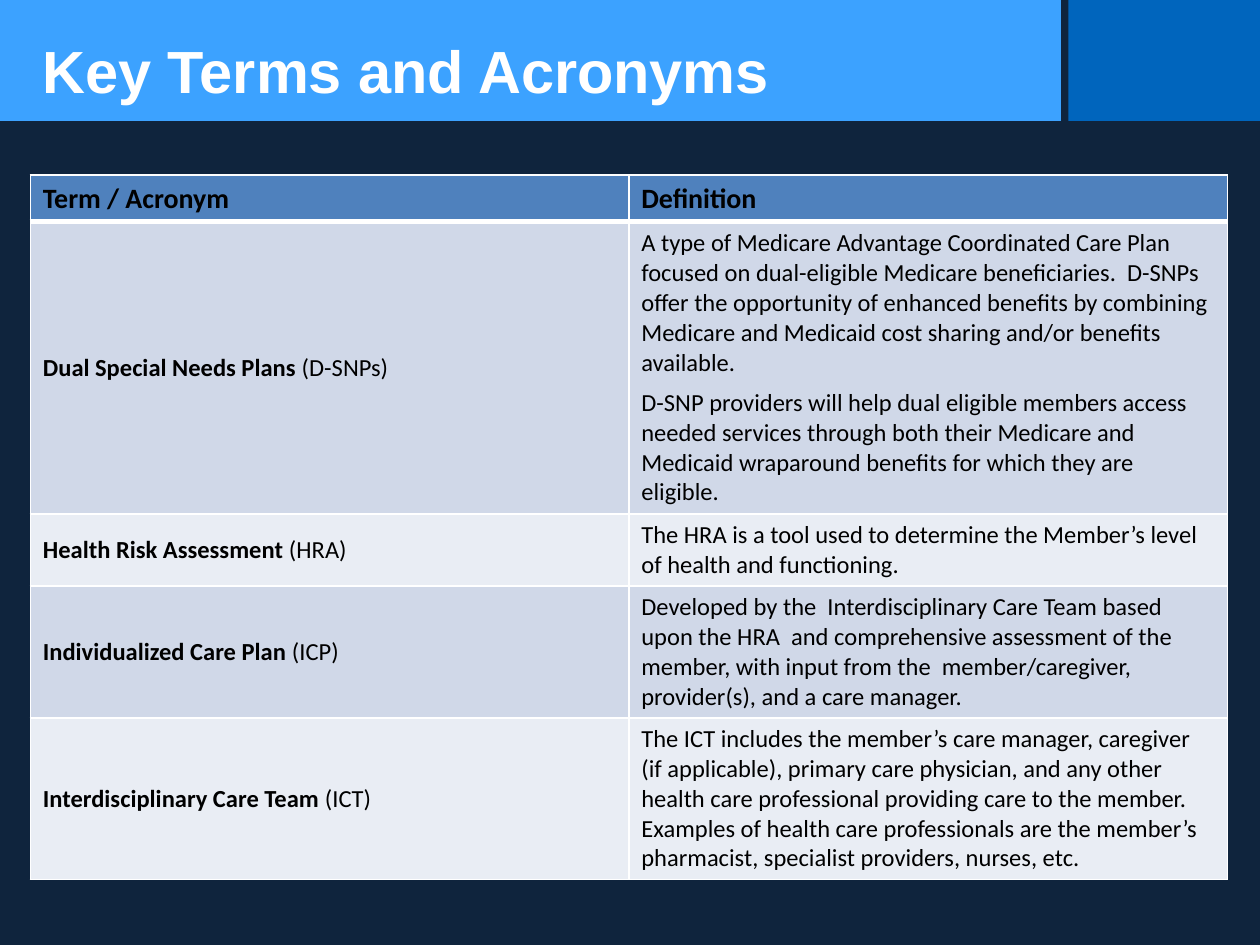
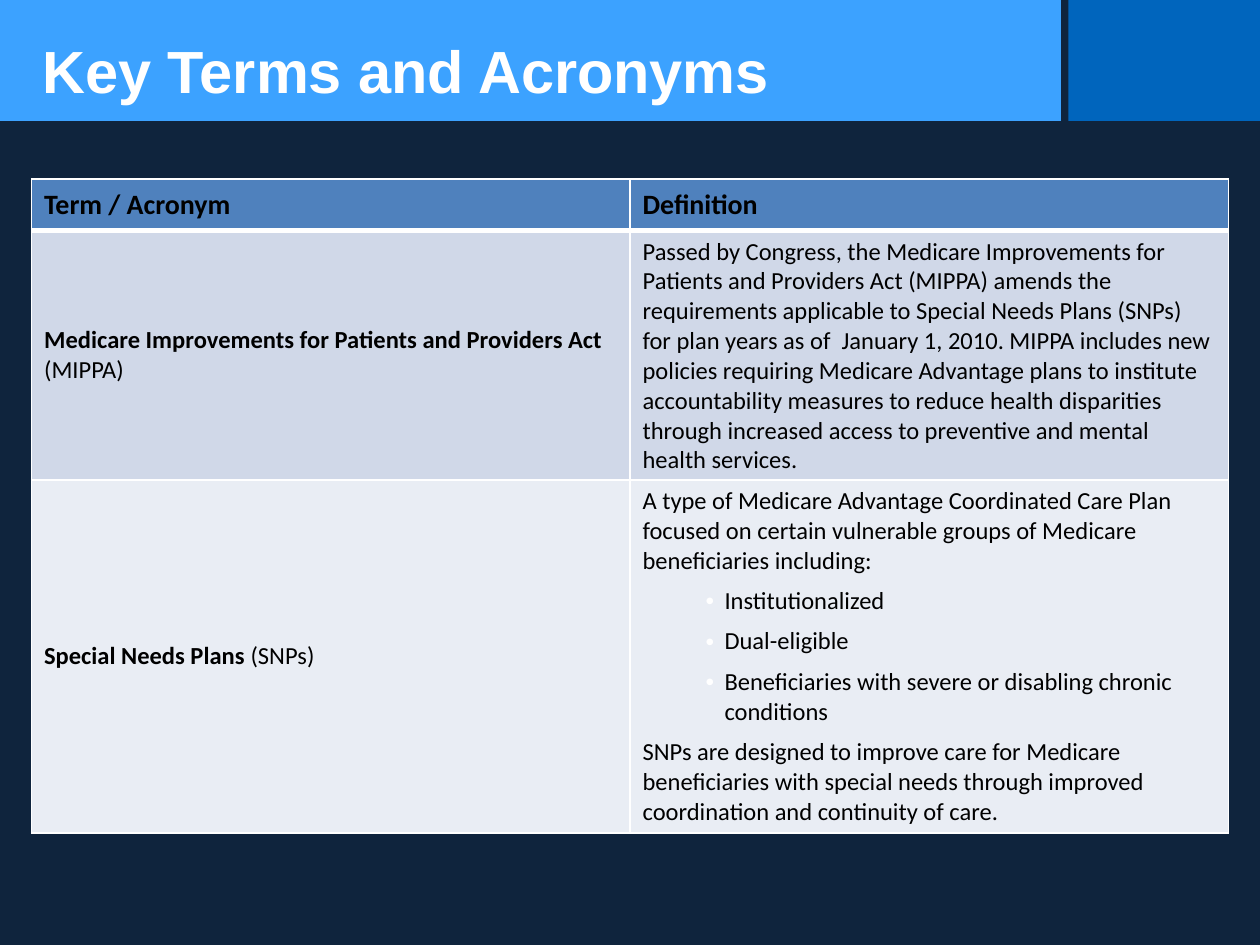
import pptx
import pptx.util
import pptx.dml.color
import pptx.enum.shapes
import pptx.enum.text
import pptx.oxml
import pptx.oxml.ns
from dataclasses import dataclass

Inches = pptx.util.Inches
Pt = pptx.util.Pt


@dataclass(frozen=True)
class Theme:
    background: str = "0F243D"
    title_band: str = "3CA2FF"
    corner_band: str = "0065BD"
    header_fill: str = "4F81BD"
    row_fills: tuple = ("D0D8E8", "E9EDF4")
    light: str = "FFFFFF"
    dark: str = "000000"
    title_font: str = "Arial"
    table_font: str = "Calibri"
    title_size: int = 34
    header_size: int = 16
    body_size: int = 14
    paragraph_gap: int = 6
    grid_width: int = 1
    header_rule: int = 3


THEME = Theme()
BULLET = "• "  # marks a definition line that is set as a list item

KEY_TERMS = [
    ("Dual Special Needs Plans", " (D-SNPs)", [
        "A type of Medicare Advantage Coordinated Care Plan focused on "
        "dual-eligible Medicare beneficiaries.  D-SNPs offer the opportunity of "
        "enhanced benefits by combining Medicare and Medicaid cost sharing "
        "and/or benefits available.",
        "D-SNP providers will help dual eligible members access needed services "
        "through both their Medicare and Medicaid wraparound benefits for which "
        "they are eligible."]),
    ("Health Risk Assessment", " (HRA)", [
        "The HRA is a tool used to determine the Member’s level of health and "
        "functioning."]),
    ("Individualized Care Plan", " (ICP)", [
        "Developed by the  Interdisciplinary Care Team based upon the HRA  and "
        "comprehensive assessment of the member, with input from the  "
        "member/caregiver, provider(s), and a care manager."]),
    ("Interdisciplinary Care Team", " (ICT)", [
        "The ICT includes the member’s care manager, caregiver (if applicable), "
        "primary care physician, and any other health care professional "
        "providing care to the member.  Examples of health care professionals "
        "are the member’s pharmacist, specialist providers, nurses, etc."]),
]

MORE_TERMS = [
    ("Medicare Improvements for Patients and Providers Act", " (MIPPA)", [
        "Passed by Congress, the Medicare Improvements for Patients and "
        "Providers Act (MIPPA) amends the requirements applicable to Special "
        "Needs Plans (SNPs) for plan years as of  January 1, 2010. MIPPA includes "
        "new policies requiring Medicare Advantage plans to institute "
        "accountability measures to reduce health disparities through increased "
        "access to preventive and mental health services."]),
    ("Special Needs Plans", " (SNPs)", [
        "A type of Medicare Advantage Coordinated Care Plan focused on certain "
        "vulnerable groups of Medicare beneficiaries including:",
        BULLET + "Institutionalized",
        BULLET + "Dual-eligible",
        BULLET + "Beneficiaries with severe or disabling chronic conditions",
        "SNPs are designed to improve care for Medicare beneficiaries with "
        "special needs through improved coordination and continuity of care."]),
]


def rgb(value):
    return pptx.dml.color.RGBColor.from_string(value)


def add_run(p, text, font, size, color, bold=False):
    r = p.add_run()
    r.text = text
    r.font.name = font
    r.font.size = Pt(size)
    r.font.color.rgb = rgb(color)
    r.font.bold = bold


def add_band(slide, box, color):
    sp = slide.shapes.add_shape(
        pptx.enum.shapes.MSO_SHAPE.RECTANGLE, *map(Inches, box))
    sp.shadow.inherit = False
    sp.fill.solid()
    sp.fill.fore_color.rgb = rgb(color)
    sp.line.fill.background()


def add_title_bar(slide, box, title):
    """Two bands with a gap between them, and the title over the wide one."""
    left, top, width, height = box
    corner, gap = 1.52, 0.06
    add_band(slide, (left, top, width - corner - gap, height), THEME.title_band)
    add_band(slide, (left + width - corner, top, corner, height),
             THEME.corner_band)
    sp = slide.shapes.add_textbox(
        Inches(left + 0.24), Inches(top + 0.01), Inches(9.5), Inches(0.88))
    tf = sp.text_frame
    tf.word_wrap = True
    tf.vertical_anchor = pptx.enum.text.MSO_ANCHOR.BOTTOM
    p = tf.paragraphs[0]
    p.line_spacing = 0.9
    add_run(p, title, THEME.title_font, THEME.title_size, THEME.light, True)


def set_borders(cell, top, bottom):
    tcPr = cell._tc.get_or_add_tcPr()
    widths = {"lnL": THEME.grid_width, "lnR": THEME.grid_width,
              "lnT": top, "lnB": bottom}
    for side, width in widths.items():
        tcPr.append(pptx.oxml.parse_xml(
            f'<a:{side} {pptx.oxml.ns.nsdecls("a")} w="{Pt(width)}">'
            f'<a:solidFill><a:srgbClr val="{THEME.light}"/></a:solidFill>'
            f'</a:{side}>'))


def style_cell(cell, row):
    """Fill, borders and anchor; a heavy rule divides header from body."""
    top = THEME.header_rule if row == 1 else THEME.grid_width
    bottom = THEME.header_rule if row == 0 else THEME.grid_width
    set_borders(cell, top, bottom)
    fills = THEME.row_fills
    cell.fill.solid()
    cell.fill.fore_color.rgb = rgb(
        fills[(row - 1) % len(fills)] if row else THEME.header_fill)
    cell.vertical_anchor = pptx.enum.text.MSO_ANCHOR.MIDDLE


def add_bullet(p):
    pPr = p._p.get_or_add_pPr()
    pPr.set("marL", str(Inches(0.65)))
    pPr.set("indent", str(-Inches(0.15)))
    ns = pptx.oxml.ns.nsdecls("a")
    for xml in (f'<a:buClr {ns}><a:srgbClr val="{THEME.light}"/></a:buClr>',
                f'<a:buFont {ns} typeface="Arial"/>',
                f'<a:buChar {ns} char="{BULLET.strip()}"/>'):
        pPr.append(pptx.oxml.parse_xml(xml))


def write_definition(tf, lines):
    for i, line in enumerate(lines):
        p = tf.add_paragraph() if i else tf.paragraphs[0]
        if i:
            p.space_before = Pt(THEME.paragraph_gap)
        if line.startswith(BULLET):
            add_bullet(p)
        add_run(p, line.removeprefix(BULLET), THEME.table_font,
                THEME.body_size, THEME.dark)


def add_terms_table(slide, box, terms, row_heights):
    left, top, width = box
    table = slide.shapes.add_table(
        len(terms) + 1, 2, Inches(left), Inches(top), Inches(width),
        Inches(sum(row_heights))).table
    table.horz_banding = False
    for column in table.columns:
        column.width = Inches(width / 2)
    for i, (row, height) in enumerate(zip(table.rows, row_heights)):
        row.height = Inches(height)
        for cell in row.cells:
            style_cell(cell, i)

    # Header row
    for cell, heading in zip(table.rows[0].cells,
                             ("Term / Acronym", "Definition")):
        add_run(cell.text_frame.paragraphs[0], heading, THEME.table_font,
                THEME.header_size, THEME.dark, True)

    # Term rows
    for i, (term, acronym, lines) in enumerate(terms, start=1):
        p = table.cell(i, 0).text_frame.paragraphs[0]
        add_run(p, term, THEME.table_font, THEME.body_size, THEME.dark, True)
        add_run(p, acronym, THEME.table_font, THEME.body_size, THEME.dark)
        write_definition(table.cell(i, 1).text_frame, lines)


def add_terms_slide(prs, box, terms, row_heights):
    slide = prs.slides.add_slide(prs.slide_layouts[6])
    slide.background.fill.solid()
    slide.background.fill.fore_color.rgb = rgb(THEME.background)
    add_title_bar(slide, (0, 0, 10, 0.96), "Key Terms and Acronyms")
    add_terms_table(slide, box, terms, row_heights)


def main():
    prs = pptx.Presentation()
    prs.slide_width = Inches(10)
    prs.slide_height = Inches(7.5)
    add_terms_slide(prs, (0.24, 1.39, 9.5), KEY_TERMS,
                    (0.37, 2.32, 0.57, 1.05, 1.28))
    add_terms_slide(prs, (0.25, 1.42, 9.5), MORE_TERMS, (0.41, 1.98, 2.8))
    prs.save("out.pptx")


if __name__ == "__main__":
    main()
